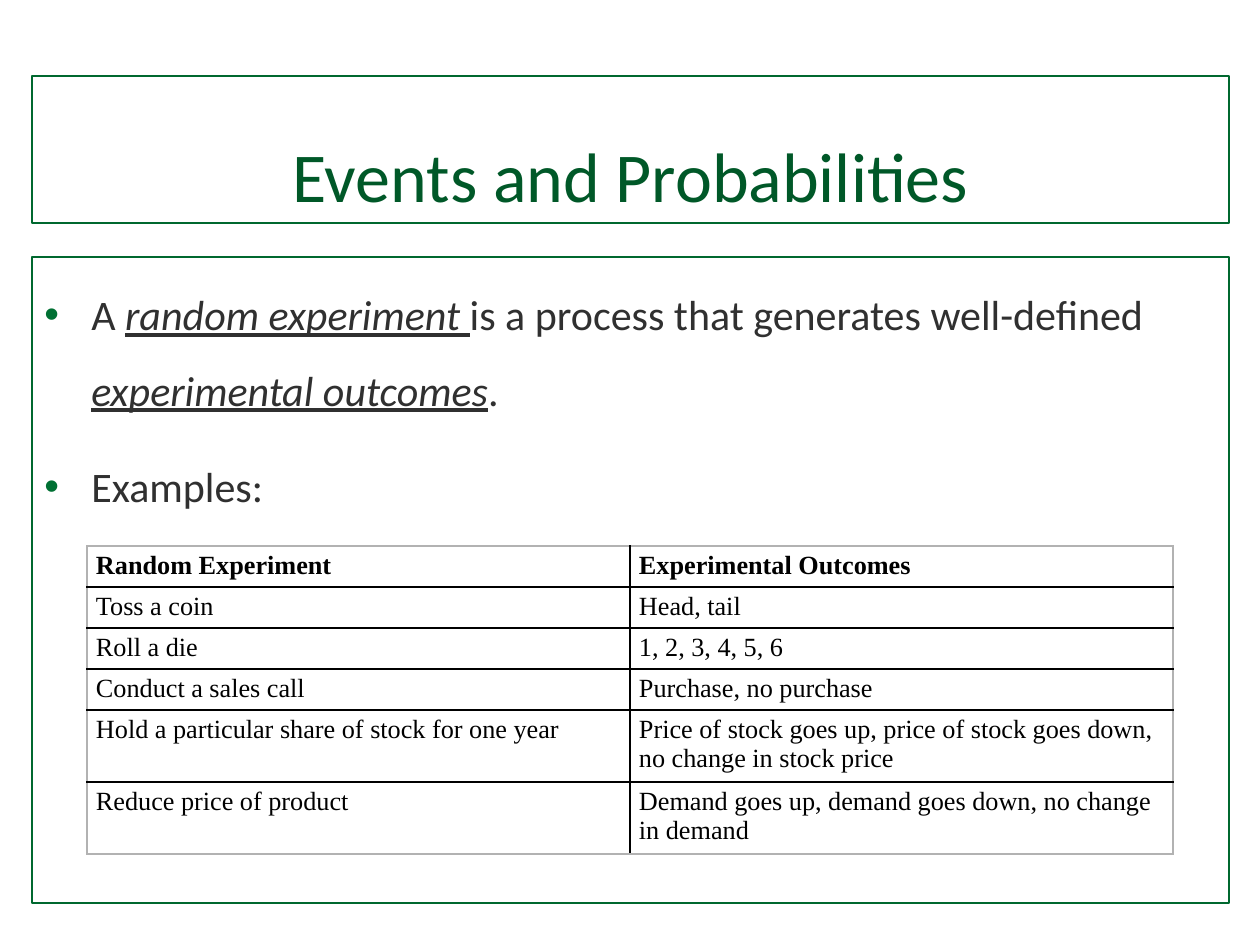
from dataclasses import dataclass

from lxml.etree import SubElement
from pptx import Presentation
from pptx.dml.color import RGBColor as RGB
from pptx.enum.shapes import MSO_SHAPE as SHAPE
from pptx.enum.text import MSO_ANCHOR as ANCHOR, PP_ALIGN as ALIGN
from pptx.oxml.ns import qn
from pptx.util import Emu, Pt


@dataclass(frozen=True)
class Theme:
    frame: str = "00682F"
    title: str = "005828"
    body: str = "303030"
    bullet: str = "007033"
    ink: str = "000000"
    edge: str = "B2B2B2"
    sans: str = "Calibri"
    serif: str = "Times New Roman"
    title_size: int = 40
    body_size: int = 24
    table_size: int = 15
    frame_width: float = 0.75
    rule_width: int = 1


T = Theme()
PX_PER_INCH = 126
TITLE = "Events and Probabilities"
BULLETS = [
    [("A ", False), ("random experiment ", True),
     ("is a process that generates well-defined ", False),
     ("experimental outcomes", True), (".", False)],
    [("Examples:", False)],
]
ROWS = [
    ("Random Experiment", "Experimental Outcomes"),
    ("Toss a coin", "Head, tail"),
    ("Roll a die", "1, 2, 3, 4, 5, 6"),
    ("Conduct a sales call", "Purchase, no purchase"),
    ("Hold a particular share of stock for one year",
     "Price of stock goes up, price of stock goes down, no change in stock price"),
    ("Reduce price of product",
     "Demand goes up, demand goes down, no change in demand"),
]


def px(n):
    return Emu(round(n * 914400 / PX_PER_INCH))


def apply(obj, **values):
    for name, value in values.items():
        setattr(obj, name, value)


def add_run(p, text, color, **font):
    r = p.add_run()
    r.text = text
    apply(r.font, **font)
    r.font.color.rgb = RGB.from_string(color)


def add_frame(s, box, anchor):
    sp = s.shapes.add_shape(SHAPE.RECTANGLE, *map(px, box))
    sp.shadow.inherit = False
    sp.fill.background()
    sp.line.color.rgb = RGB.from_string(T.frame)
    sp.line.width = Pt(T.frame_width)
    apply(sp.text_frame, word_wrap=True, vertical_anchor=anchor)
    return sp.text_frame


def add_title(s, box):
    p = add_frame(s, box, ANCHOR.BOTTOM).paragraphs[0]
    p.alignment = ALIGN.CENTER
    add_run(p, TITLE, T.title, name=T.sans, size=Pt(T.title_size))


def add_bullet(p, indent):
    pPr = p._p.get_or_add_pPr()
    pPr.set("marL", str(indent))
    pPr.set("indent", str(-indent))
    color = SubElement(pPr, qn("a:buClr"))
    SubElement(color, qn("a:srgbClr"), val=T.bullet)
    SubElement(pPr, qn("a:buFont"), typeface="Arial")
    SubElement(pPr, qn("a:buChar"), char="•")


def add_body(s, box):
    tf = add_frame(s, box, ANCHOR.TOP)
    for i, parts in enumerate(BULLETS):
        p = tf.add_paragraph() if i else tf.paragraphs[0]
        add_bullet(p, px(47))
        apply(p, alignment=ALIGN.LEFT, line_spacing=1.5,
              space_before=Pt(6 if i else 0), space_after=Pt(6))
        for text, term in parts:
            add_run(p, text, T.body, name=T.sans, size=Pt(T.body_size),
                    italic=term, underline=term)


def add_border(cell, side, color, width):
    tcPr = cell._tc.get_or_add_tcPr()
    ln = SubElement(tcPr, qn(f"a:ln{side}"), w=str(Pt(width)))
    fill = SubElement(ln, qn("a:solidFill"))
    SubElement(fill, qn("a:srgbClr"), val=color)


def add_outcomes(s, box, heights):
    n_rows, n_cols = len(ROWS), len(ROWS[0])
    table = s.shapes.add_table(n_rows, n_cols, *map(px, box)).table
    apply(table, first_row=False, horz_banding=False)
    for col in table.columns:
        col.width = px(box[2] // n_cols)
    for i, (texts, height) in enumerate(zip(ROWS, heights)):
        table.rows[i].height = px(height)
        for j, text in enumerate(texts):
            cell = table.cell(i, j)
            apply(cell, margin_left=px(9), margin_right=px(9),
                  margin_top=px(5), margin_bottom=px(5))
            outer = {"L": j == 0, "R": j == n_cols - 1,
                     "T": i == 0, "B": i == n_rows - 1}
            for side, is_outer in outer.items():
                add_border(cell, side, T.edge if is_outer else T.ink, T.rule_width)
            cell.fill.background()
            add_run(cell.text_frame.paragraphs[0], text, T.ink, name=T.serif,
                    size=Pt(T.table_size), bold=i == 0)


def main():
    prs = Presentation()
    apply(prs, slide_width=px(1260), slide_height=px(945))
    s = prs.slides.add_slide(prs.slide_layouts[6])
    add_body(s, (32, 257, 1197, 646))
    add_outcomes(s, (87, 546, 1086, 308), [41] * 4 + [72] * 2)
    add_title(s, (32, 76, 1197, 147))
    prs.save("out.pptx")


if __name__ == "__main__":
    main()
